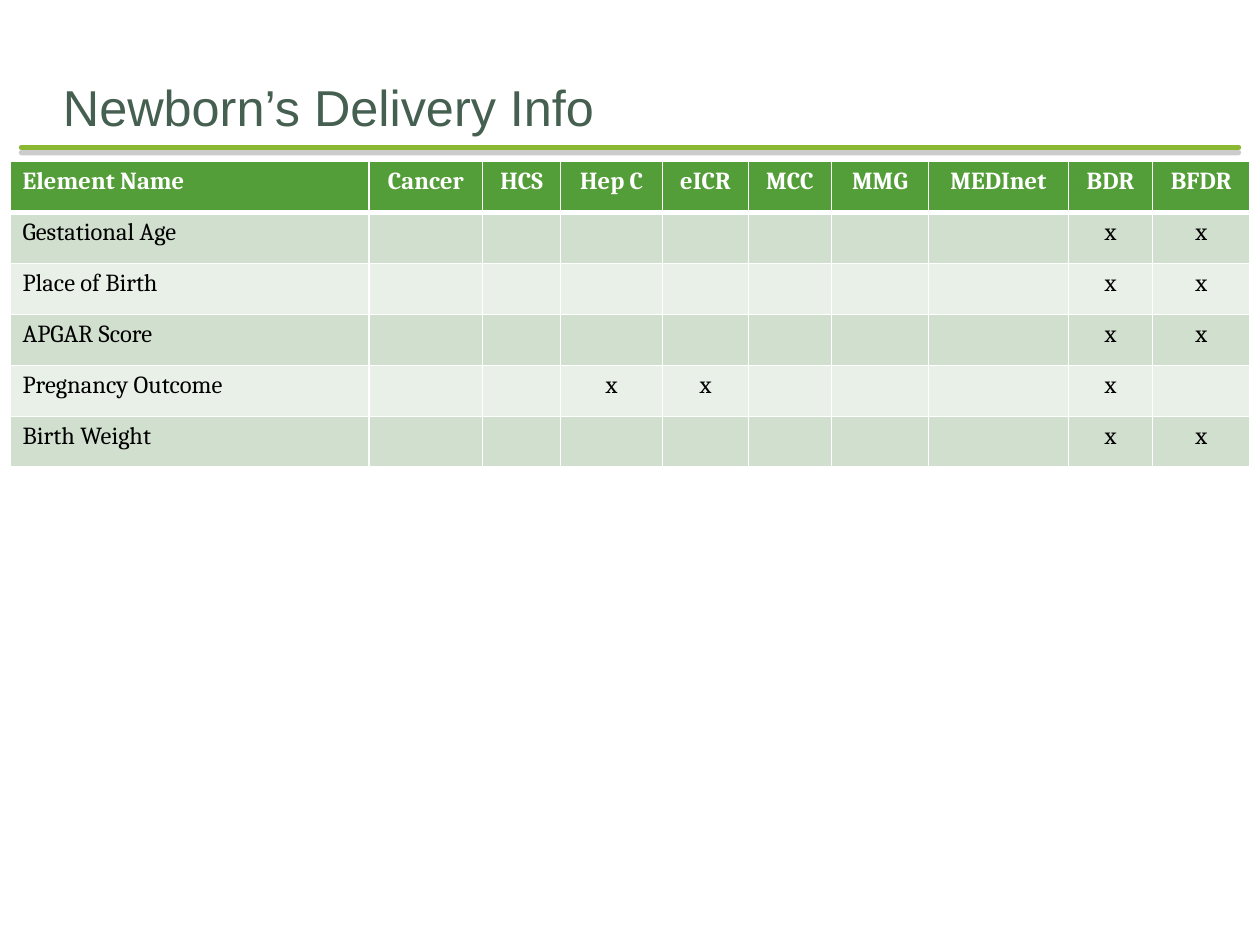
import pptx
import pptx.dml.color
import pptx.enum.shapes
import pptx.enum.text
import pptx.oxml
import pptx.oxml.ns
import pptx.util
from lxml import etree

Inches, Pt = pptx.util.Inches, pptx.util.Pt
ALIGN = pptx.enum.text.PP_ALIGN
DRAWING = pptx.oxml.ns.nsdecls("a")


def color(value):
    return pptx.dml.color.RGBColor.from_string(value)


def add_run(para, text, font, size, value, bold=False):
    span = para.add_run()
    span.text = text
    span.font.name = font
    span.font.size = Pt(size)
    span.font.color.rgb = color(value)
    span.font.bold = bold


deck = pptx.Presentation()
deck.slide_width, deck.slide_height = Inches(10), Inches(7.5)
width, height = deck.slide_width, deck.slide_height
page = deck.slides.add_slide(deck.slide_layouts[6])

# Rule under the title, with a hard grey shadow
rule_y = Inches(1.17)
rule = page.shapes.add_connector(
    pptx.enum.shapes.MSO_CONNECTOR.STRAIGHT,
    Inches(0.17), rule_y, width - Inches(0.17), rule_y)
rule.line.color.rgb = color("8AB833")
rule.line.width = Pt(3)
rule.line._get_or_add_ln().set("cap", "rnd")
rule._element.spPr.append(pptx.oxml.parse_xml(
    f'<a:effectLst {DRAWING}>'
    f'<a:outerShdw blurRad="0" dist="{Pt(3)}" dir="5400000" rotWithShape="0">'
    '<a:srgbClr val="808080"><a:alpha val="40000"/></a:srgbClr>'
    '</a:outerShdw></a:effectLst>'))

# Title
box = page.shapes.add_textbox(
    int(width * 0.05), Inches(0.5), int(width * 0.9), Inches(0.58))
frame = box.text_frame
frame.word_wrap = True
frame.vertical_anchor = pptx.enum.text.MSO_ANCHOR.BOTTOM
frame.margin_left = frame.margin_right = frame.margin_bottom = 0
frame.margin_top = Inches(0.05)
add_run(frame.paragraphs[0], "Newborn’s Delivery Info", "Arial", 28.8, "455F51")

# Table content: each element with the columns that are marked
columns = {"Element Name": 2.85, "Cancer": 0.9, "HCS": 0.62, "Hep C": 0.81,
           "eICR": 0.68, "MCC": 0.66, "MMG": 0.77, "MEDInet": 1.11,
           "BDR": 0.67, "BFDR": 0.77}
elements = {
    "Gestational Age": ["BDR", "BFDR"],
    "Place of Birth": ["BDR", "BFDR"],
    "APGAR Score": ["BDR", "BFDR"],
    "Pregnancy Outcome": ["Hep C", "eICR", "BDR"],
    "Birth Weight": ["BDR", "BFDR"],
}
names = list(columns)
rows = [names]
for element, marked in elements.items():
    rows.append([element] + ["x" if name in marked else "" for name in names[1:]])

# Table grid
row_height = Inches(0.405)
table = page.shapes.add_table(
    len(rows), len(names), Inches(0.08), Inches(1.28),
    Inches(sum(columns.values())), row_height * len(rows)).table
for column, inches in zip(table.columns, columns.values()):
    column.width = Inches(inches)

# Cells: white borders, banded fills, centred marks
for r, texts in enumerate(rows):
    header = r == 0
    fill = "549E39" if header else ("E9F0E8", "D1DFCE")[r % 2]
    for c, text in enumerate(texts):
        cell = table.cell(r, c)
        for side in "LRTB":
            thick = (header and side == "B") or (r == 1 and side == "T")
            cell._tc.get_or_add_tcPr().append(pptx.oxml.parse_xml(
                f'<a:ln{side} {DRAWING} w="{Pt(3 if thick else 1)}"><a:solidFill>'
                f'<a:srgbClr val="FFFFFF"/></a:solidFill></a:ln{side}>'))
        cell.fill.solid()
        cell.fill.fore_color.rgb = color(fill)
        para = cell.text_frame.paragraphs[0]
        para.alignment = ALIGN.CENTER if c else ALIGN.LEFT
        if text:
            add_run(para, text, "Cambria", 14,
                    "FFFFFF" if header else "000000", header)

deck.save("out.pptx")
